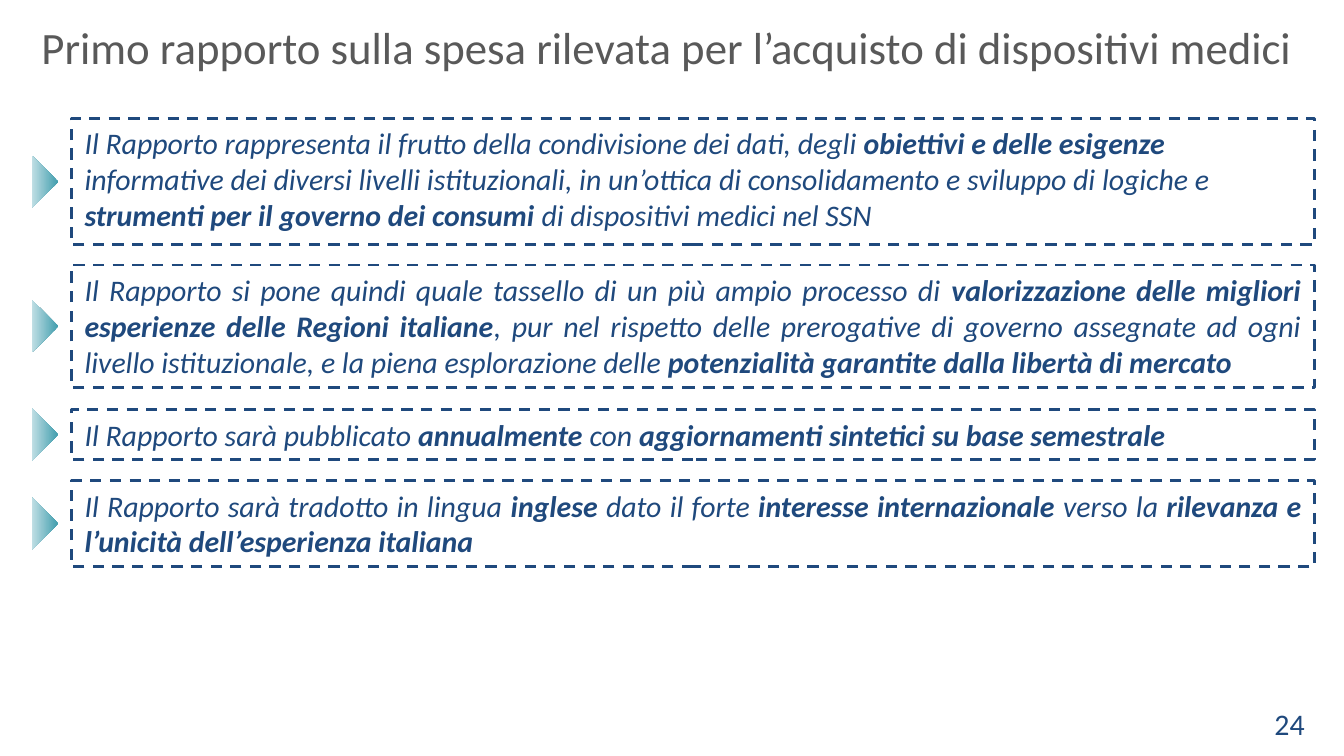
from pptx import Presentation
from pptx.dml.color import RGBColor
from pptx.enum.dml import MSO_LINE
from pptx.enum.shapes import MSO_SHAPE
from pptx.enum.text import MSO_ANCHOR, PP_ALIGN
from pptx.util import Pt

RECTANGLE, ARROW = MSO_SHAPE.RECTANGLE, MSO_SHAPE.UP_ARROW
LEFT, RIGHT, JUSTIFY = PP_ALIGN.LEFT, PP_ALIGN.RIGHT, PP_ALIGN.JUSTIFY
TOP = MSO_ANCHOR.TOP
DASH = MSO_LINE.DASH

COLORS = {"navy": "1F497D", "gray": "595959", "teal": "409DAD", "pale_teal": "BFDEE4"}
BOX_LEFT, BOX_WIDTH = 38.2, 666
ARROW_CENTER, ARROW_WIDTH, ARROW_HEIGHT = 24.2, 28, 14.2

# Each statement alternates regular and bold runs.
STATEMENTS = [
    (63.5, 67.7, LEFT, [
        "Il Rapporto rappresenta il frutto della condivisione dei dati, degli ",
        "obiettivi e delle esigenze ",
        "informative dei diversi livelli istituzionali, in un’ottica di consolidamento e sviluppo di logiche e ",
        "strumenti per il governo dei consumi ",
        "di dispositivi medici nel SSN",
    ]),
    (142, 65.5, JUSTIFY, [
        "Il Rapporto si pone quindi quale tassello di un più ampio processo di ",
        "valorizzazione delle migliori esperienze delle Regioni italiane",
        ", pur nel rispetto delle prerogative di governo assegnate ad ogni livello istituzionale, "
        "e la piena esplorazione delle ",
        "potenzialità garantite dalla libertà di mercato",
    ]),
    (219.5, 26.6, JUSTIFY, [
        "Il Rapporto sarà pubblicato ",
        "annualmente",
        " con ",
        "aggiornamenti sintetici su base semestrale",
    ]),
    (257.5, 46, JUSTIFY, [
        "Il Rapporto sarà tradotto in lingua ",
        "inglese",
        " dato il forte ",
        "interesse internazionale ",
        "verso la ",
        "rilevanza e l’unicità dell’esperienza italiana",
    ]),
]


def color(name):
    return RGBColor.from_string(COLORS[name])


def format_run(run, size, color_name, bold=False, italic=False):
    run.font.name = "Calibri"
    run.font.size = Pt(size)
    run.font.bold = bold
    run.font.italic = italic
    run.font.color.rgb = color(color_name)


presentation = Presentation()
presentation.slide_width = Pt(720)
presentation.slide_height = Pt(405)
slide = presentation.slides.add_slide(presentation.slide_layouts[5])

title = slide.shapes.title
title.left, title.top, title.width, title.height = Pt(15), Pt(7.2), Pt(690), Pt(35.3)
title.text_frame.text = "Primo rapporto sulla spesa rilevata per l’acquisto di dispositivi medici"
title.text_frame.vertical_anchor = TOP
title.text_frame.paragraphs[0].alignment = LEFT
format_run(title.text_frame.paragraphs[0].runs[0], 24, "gray")

for top, height, alignment, texts in STATEMENTS:
    box = slide.shapes.add_shape(RECTANGLE, Pt(BOX_LEFT), Pt(top), Pt(BOX_WIDTH), Pt(height))
    box.shadow.inherit = False
    box.fill.background()
    box.line.color.rgb = color("navy")
    box.line.width = Pt(1.5)
    box.line.dash_style = DASH
    box.text_frame.word_wrap = True
    box.text_frame.vertical_anchor = TOP
    paragraph = box.text_frame.paragraphs[0]
    paragraph.alignment = alignment
    for index, text in enumerate(texts):
        run = paragraph.add_run()
        run.text = text
        format_run(run, 16, "navy", bold=index % 2 == 1, italic=True)

    arrow = slide.shapes.add_shape(
        ARROW,
        Pt(ARROW_CENTER - ARROW_WIDTH / 2),
        Pt(top + height / 2 - ARROW_HEIGHT / 2),
        Pt(ARROW_WIDTH),
        Pt(ARROW_HEIGHT),
    )
    arrow.rotation = 90
    arrow.adjustments[0] = 0.62
    arrow.adjustments[1] = 1.39
    arrow.shadow.inherit = False
    arrow.line.fill.background()
    arrow.fill.gradient()
    arrow.fill.gradient_angle = 270
    for stop, position, name in zip(arrow.fill.gradient_stops, (0, 1), ("teal", "pale_teal")):
        stop.position = position
        stop.color.rgb = color(name)

page_number = slide.shapes.add_textbox(Pt(538), Pt(374.5), Pt(168), Pt(21.6))
page_number.text_frame.word_wrap = True
page_number.text_frame.text = "24"
page_number.text_frame.paragraphs[0].alignment = RIGHT
format_run(page_number.text_frame.paragraphs[0].runs[0], 16, "navy")

presentation.save("out.pptx")
